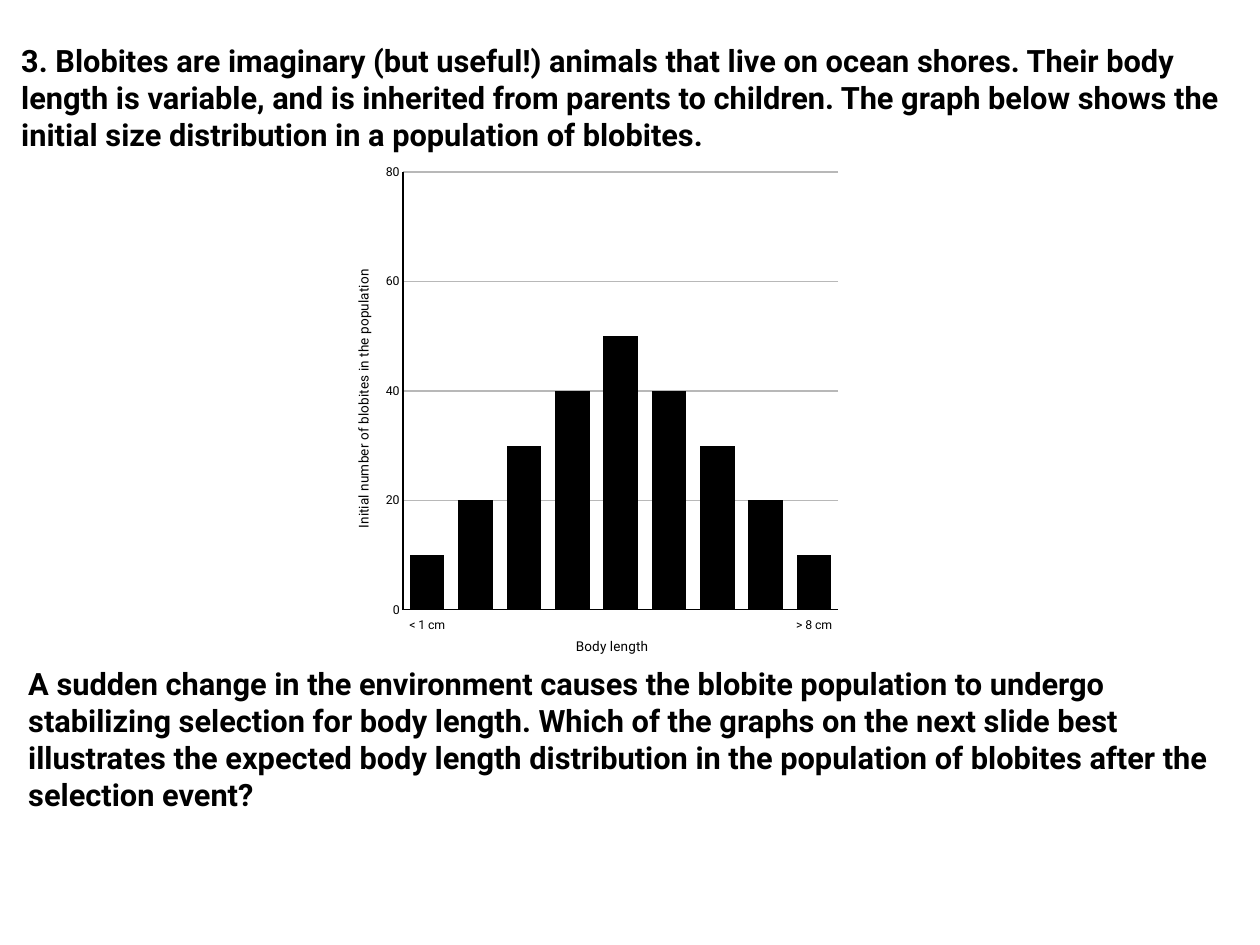
from lxml import etree
from pptx import Presentation
from pptx.chart.data import CategoryChartData
from pptx.dml.color import RGBColor
from pptx.enum import chart as ch, text
from pptx.oxml.ns import qn
from pptx.util import Cm, Pt

FONT = "Roboto"
BLACK = "000000"
GRID = "B8B8B8"


def rgb(hex_color):
    return RGBColor.from_string(hex_color)


def style_font(font, size, bold=False):
    font.name = FONT
    font.size = Pt(size)
    font.bold = bold
    font.color.rgb = rgb(BLACK)


prs = Presentation()
prs.slide_width, prs.slide_height = Cm(36.12), Cm(27.1)
s = prs.slides.add_slide(prs.slide_layouts[6])

# Question text above and below the graph
paragraphs = [
    ((0.46, 1.07, 35.18, 3.45),
     "3. Blobites are imaginary (but useful!) animals that live on ocean shores. "
     "Their body length is variable, and is inherited from parents to children. "
     "The graph below shows the initial size distribution in a population of blobites."),
    ((0.66, 18.92, 34.77, 4.52),
     "A sudden change in the environment causes the blobite population to undergo "
     "stabilizing selection for body length. Which of the graphs on the next slide best "
     "illustrates the expected body length distribution in the population of blobites "
     "after the selection event?"),
]
for box, wording in paragraphs:
    tf = s.shapes.add_textbox(*map(Cm, box)).text_frame
    tf.word_wrap = True
    tf.vertical_anchor = text.MSO_ANCHOR.MIDDLE
    tf.margin_left = tf.margin_right = tf.margin_top = tf.margin_bottom = Cm(0.15)
    r = tf.paragraphs[0].add_run()
    r.text = wording
    style_font(r.font, 25, bold=True)

# Initial size distribution
data = CategoryChartData()
data.categories = ["< 1 cm"] + [""] * 7 + ["> 8 cm"]
data.add_series("Series 1", [10, 20, 30, 40, 50, 40, 30, 20, 10])
chart = s.shapes.add_chart(ch.XL_CHART_TYPE.COLUMN_CLUSTERED, Cm(10.08), Cm(4.52),
                           Cm(14.02), Cm(14.38), data).chart
chart.has_title = False
chart.has_legend = False
style_font(chart.font, 10)

plot = chart.plots[0]
plot.gap_width = 40
plot.overlap = -10
plot.vary_by_categories = False
bars = plot.series[0].format.fill
bars.solid()
bars.fore_color.rgb = rgb(BLACK)

axis_titles = [
    (chart.category_axis, "Body length"),
    (chart.value_axis, "Initial number of blobites in the population"),
]
for axis, title in axis_titles:
    axis.major_tick_mark = axis.minor_tick_mark = ch.XL_TICK_MARK.NONE
    axis.format.line.color.rgb = rgb(BLACK)
    axis.format.line.width = Pt(1)
    style_font(axis.tick_labels.font, 10)
    r = axis.axis_title.text_frame.paragraphs[0].add_run()
    r.text = title
    style_font(r.font, 11)

chart.category_axis.tick_label_position = ch.XL_TICK_LABEL_POSITION.LOW
sizes = chart.value_axis
sizes.minimum_scale, sizes.maximum_scale, sizes.major_unit = 0, 80, 20
sizes.tick_labels.number_format = "0"
sizes.tick_labels.number_format_is_linked = False
sizes.has_major_gridlines = True
sizes.major_gridlines.format.line.color.rgb = rgb(GRID)
sizes.major_gridlines.format.line.width = Pt(1)

# Fixed inner plot area, as fractions of the chart
plot_area = chart.element.find(".//" + qn("c:plotArea"))
for old in plot_area.findall(qn("c:layout")):
    plot_area.remove(old)
layout = etree.Element(qn("c:layout"))
manual = etree.SubElement(layout, qn("c:manualLayout"))
for tag, val in [("layoutTarget", "inner"), ("xMode", "edge"), ("yMode", "edge"),
                 ("x", "0.105"), ("y", "0.029"), ("w", "0.89"), ("h", "0.873")]:
    etree.SubElement(manual, qn("c:" + tag)).set("val", val)
plot_area.insert(0, layout)

prs.save("out.pptx")
